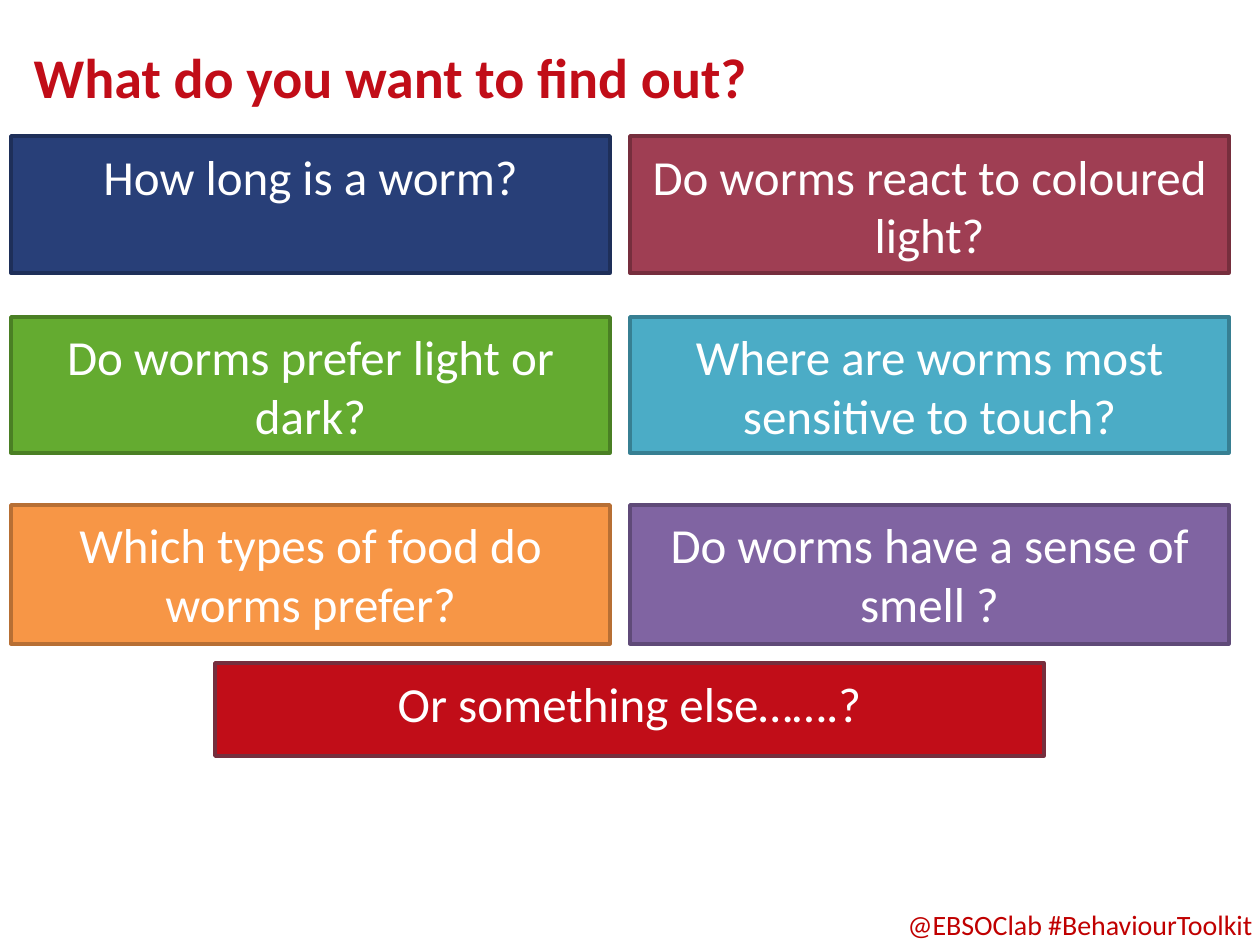
from pptx import Presentation
from pptx.dml.color import RGBColor
from pptx.enum.shapes import MSO_SHAPE
from pptx.enum.text import MSO_ANCHOR, PP_ALIGN
from pptx.util import Pt

RED = RGBColor(0xC1, 0x0D, 0x18)
WINE = RGBColor(0x76, 0x2E, 0x3D)
WHITE = RGBColor(0xFF, 0xFF, 0xFF)
CRIMSON = RGBColor(0xC0, 0x00, 0x00)
NAVY, INK = RGBColor(0x28, 0x3F, 0x78), RGBColor(0x1E, 0x2F, 0x59)
GREEN, MOSS = RGBColor(0x64, 0xAB, 0x30), RGBColor(0x4A, 0x7F, 0x24)
ORANGE, RUST = RGBColor(0xF7, 0x96, 0x46), RGBColor(0xB7, 0x6F, 0x34)
ROSE = RGBColor(0x9F, 0x3E, 0x53)
AQUA, TEAL = RGBColor(0x4B, 0xAC, 0xC6), RGBColor(0x37, 0x7F, 0x92)
PURPLE, PLUM = RGBColor(0x80, 0x64, 0xA2), RGBColor(0x5F, 0x4A, 0x78)

TITLE = "What do you want to find out?"
FOOTER = "@EBSOClab #BehaviourToolkit"
GRID = [
    [("How long is a worm?", NAVY, INK),
     ("Do worms react to coloured light?", ROSE, WINE)],
    [("Do worms prefer light or dark?", GREEN, MOSS),
     ("Where are worms most sensitive to touch?", AQUA, TEAL)],
    [("Which types of food do worms prefer?", ORANGE, RUST),
     ("Do worms have a sense of smell ?", PURPLE, PLUM)],
]
OTHER = ("Or something else…….?", RED, WINE)

ROWS = [(136, 137), (317, 136), (505, 139)]
LEFT, STEP, WIDTH = 11, 619, 599
SCALE = 914400 / 126

TITLE_FONT = {"name": "Calibri", "size": Pt(32), "bold": True}
CARD_FONT = {"name": "Calibri", "size": Pt(28)}
FOOT_FONT = {"name": "Calibri", "size": Pt(16)}


def px(*sizes):
    return [round(size * SCALE) for size in sizes]


def write(shape, text, font, color, align, anchor):
    frame = shape.text_frame
    frame.word_wrap = True
    frame.vertical_anchor = anchor
    frame.text = text
    para = frame.paragraphs[0]
    para.alignment = align
    for key, value in font.items():
        setattr(para.runs[0].font, key, value)
    para.runs[0].font.color.rgb = color


def card(slide, item, box):
    text, fill, edge = item
    shape = slide.shapes.add_shape(MSO_SHAPE.RECTANGLE, *px(*box))
    shape.shadow.inherit = False
    shape.fill.solid()
    shape.fill.fore_color.rgb = fill
    shape.line.color.rgb = edge
    shape.line.width = Pt(2)
    write(shape, text, CARD_FONT, WHITE, PP_ALIGN.CENTER, MSO_ANCHOR.TOP)
    shape.text_frame.margin_top = px(10)[0]


def main():
    deck = Presentation()
    deck.slide_width, deck.slide_height = px(1260, 945)
    slide = deck.slides.add_slide(deck.slide_layouts[5])

    title = slide.shapes.title
    title.left, title.top, title.width, title.height = px(21, 32, 1143, 89)
    write(title, TITLE, TITLE_FONT, RED, PP_ALIGN.LEFT, MSO_ANCHOR.MIDDLE)

    for (top, height), row in zip(ROWS, GRID):
        for col, item in enumerate(row):
            card(slide, item, (LEFT + col * STEP, top, WIDTH, height))
    card(slide, OTHER, (215, 663, 829, 93))

    foot = slide.shapes.add_textbox(*px(814, 901, 451, 47))
    write(foot, FOOTER, FOOT_FONT, CRIMSON, PP_ALIGN.RIGHT, MSO_ANCHOR.TOP)

    deck.save("out.pptx")


if __name__ == "__main__":
    main()
